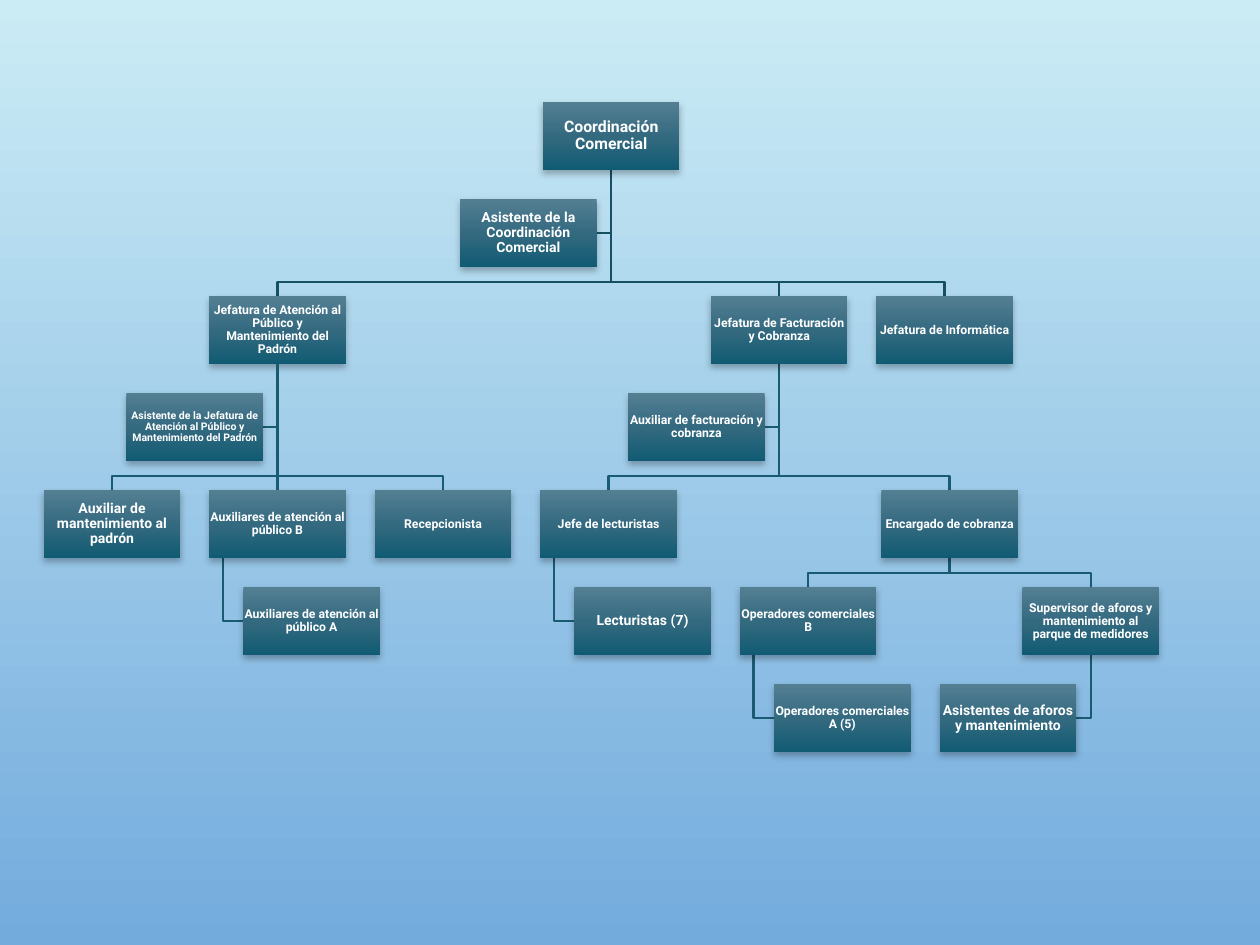
from copy import deepcopy
from dataclasses import dataclass

from pptx import Presentation
from pptx import util as u
from pptx.dml.color import RGBColor
from pptx.enum import shapes, text
from pptx.oxml import parse_xml
from pptx.oxml.ns import nsdecls, qn

COLORS = {
    "sky_top": "CBECF5", "sky_bottom": "73ABDD",
    "box_top": "547F93", "box_middle": "346A80", "box_bottom": "105B73",
    "main_link": "165063", "link": "195B70", "label": "FFFFFF", "shadow": "000000",
}
BOX_WIDTH, BOX_HEIGHT = 78.1, 39.0
FIRST_ROW, ROW_STEP = 58.3, 55.45
BUS_RISE = 8.2
HANG_RATIO = 0.1


@dataclass(frozen=True)
class Post:
    title: str
    left: float
    row: int
    size: int = 7
    boss: str = ""
    role: str = "report"

    @property
    def top(self) -> float:
        return FIRST_ROW + self.row * ROW_STEP

    @property
    def center(self) -> float:
        return self.left + BOX_WIDTH / 2

    @property
    def middle(self) -> float:
        return self.top + BOX_HEIGHT / 2

    @property
    def bottom(self) -> float:
        return self.top + BOX_HEIGHT


HEAD = "Coordinación Comercial"
PUBLIC = "Jefatura de Atención al Público y Mantenimiento del Padrón"
BILLING = "Jefatura de Facturación y Cobranza"
SERVICE_B = "Auxiliares de atención al público B"
READERS = "Jefe de lecturistas"
COLLECTION = "Encargado de cobranza"
OPERATORS_B = "Operadores comerciales B"
SUPERVISOR = "Supervisor de aforos y mantenimiento al parque de medidores"

POSTS = [
    Post(HEAD, 310.2, 0, 9),
    Post(PUBLIC, 119.5, 2, boss=HEAD),
    Post("Auxiliar de mantenimiento al padrón", 25.0, 4, 8, PUBLIC),
    Post(SERVICE_B, 119.5, 4, boss=PUBLIC),
    Post("Auxiliares de atención al público A", 139.0, 5, boss=SERVICE_B, role="hanging"),
    Post("Recepcionista", 214.1, 4, boss=PUBLIC),
    Post("Asistente de la Jefatura de Atención al Público y Mantenimiento del Padrón",
         72.2, 3, 6, PUBLIC, "assistant"),
    Post(BILLING, 406.2, 2, boss=HEAD),
    Post(READERS, 308.7, 4, boss=BILLING),
    Post("Lecturistas (7)", 328.2, 5, 8, READERS, "hanging"),
    Post(COLLECTION, 503.6, 4, boss=BILLING),
    Post(OPERATORS_B, 422.8, 5, boss=COLLECTION),
    Post("Operadores comerciales A (5)", 442.3, 6, boss=OPERATORS_B, role="hanging"),
    Post(SUPERVISOR, 584.2, 5, boss=COLLECTION),
    Post("Asistentes de aforos y mantenimiento", 537.0, 6, 8, SUPERVISOR, "assistant"),
    Post("Auxiliar de facturación y cobranza", 358.9, 3, boss=BILLING, role="assistant"),
    Post("Jefatura de Informática", 500.7, 2, boss=HEAD),
    Post("Asistente de la Coordinación Comercial", 262.9, 1, 8, HEAD, "assistant"),
]


def rgb(name: str) -> RGBColor:
    return RGBColor.from_string(COLORS[name])


def fill_gradient(fill, owner, names: list[str]) -> None:
    fill.gradient()
    fill.gradient_angle = 270
    stop_list = next(owner.iter(qn("a:gsLst")))
    while len(stop_list) < len(names):
        stop_list.append(deepcopy(stop_list[0]))
    for index, (stop, name) in enumerate(zip(fill.gradient_stops, names)):
        stop.position = index / (len(names) - 1)
        stop.color.rgb = rgb(name)


def style_line(line, post: Post) -> None:
    line.color.rgb = rgb("main_link" if post.boss == HEAD else "link")
    line.width = u.Pt(1.25)


def link_points(boss: Post, post: Post) -> list[tuple[float, float]]:
    if post.role == "hanging":
        x = boss.left + BOX_WIDTH * HANG_RATIO
        return [(x, boss.bottom), (x, post.middle), (post.left, post.middle)]
    if post.role == "assistant":
        return [(boss.center, boss.bottom), (boss.center, post.middle),
                (post.left + BOX_WIDTH, post.middle)]
    bus = post.top - BUS_RISE
    return [(boss.center, boss.bottom), (boss.center, bus),
            (post.center, bus), (post.center, post.top)]


def draw_elbow(slide, boss: Post, post: Post) -> None:
    start, *rest = [(u.Pt(x), u.Pt(y)) for x, y in link_points(boss, post)]
    builder = slide.shapes.build_freeform(*start)
    builder.add_line_segments(rest, close=False)
    elbow = builder.convert_to_shape()
    elbow.shadow.inherit = False
    elbow.fill.background()
    style_line(elbow.line, post)


def draw_straight(slide, boss_box, post_box, post: Post) -> None:
    trunk = slide.shapes.add_connector(shapes.MSO_CONNECTOR.STRAIGHT, 0, 0, 0, 0)
    trunk.begin_connect(boss_box, 2)
    trunk.end_connect(post_box, 0)
    style_line(trunk.line, post)
    trunk._element.spPr.append(parse_xml(f"<a:effectLst {nsdecls('a')}/>"))


def draw_post(slide, post: Post):
    box = slide.shapes.add_shape(
        shapes.MSO_SHAPE.RECTANGLE, u.Pt(post.left), u.Pt(post.top),
        u.Pt(BOX_WIDTH), u.Pt(BOX_HEIGHT))
    box.line.fill.background()
    fill_gradient(box.fill, box._element, ["box_top", "box_middle", "box_bottom"])
    box.shadow.inherit = False
    box._element.spPr.find(qn("a:effectLst")).append(parse_xml(
        f'<a:outerShdw {nsdecls("a")} blurRad="{u.Pt(4)}" dist="{u.Pt(2)}" dir="5400000" '
        f'rotWithShape="0"><a:srgbClr val="{COLORS["shadow"]}"><a:alpha val="28000"/>'
        "</a:srgbClr></a:outerShdw>"))
    frame = box.text_frame
    frame.word_wrap = True
    frame.vertical_anchor = text.MSO_ANCHOR.MIDDLE
    inset = u.Pt(post.size * 0.05)
    frame.margin_left = frame.margin_right = frame.margin_top = frame.margin_bottom = inset
    label = frame.paragraphs[0]
    label.text = post.title
    label.alignment = text.PP_ALIGN.CENTER
    label.line_spacing = 0.9
    label.space_after = u.Pt(post.size * 0.35)
    label.font.name = "Roboto"
    label.font.size = u.Pt(post.size)
    label.font.bold = True
    label.font.color.rgb = rgb("label")
    return box


def main() -> None:
    """Build the organisation chart of the commercial department."""
    deck = Presentation()
    deck.slide_width, deck.slide_height = u.Pt(720), u.Pt(540)
    slide = deck.slides.add_slide(deck.slide_layouts[6])
    fill_gradient(slide.background.fill, slide.element, ["sky_top", "sky_bottom"])
    by_title = {post.title: post for post in POSTS}
    reports = [(by_title[post.boss], post) for post in POSTS if post.boss]
    aligned = [pair for pair in reports if pair[0].left == pair[1].left]
    for boss, post in reports:
        if (boss, post) not in aligned:
            draw_elbow(slide, boss, post)
    boxes = {post.title: draw_post(slide, post) for post in POSTS}
    for boss, post in aligned:
        draw_straight(slide, boxes[boss.title], boxes[post.title], post)
    deck.save("out.pptx")


if __name__ == "__main__":
    main()
